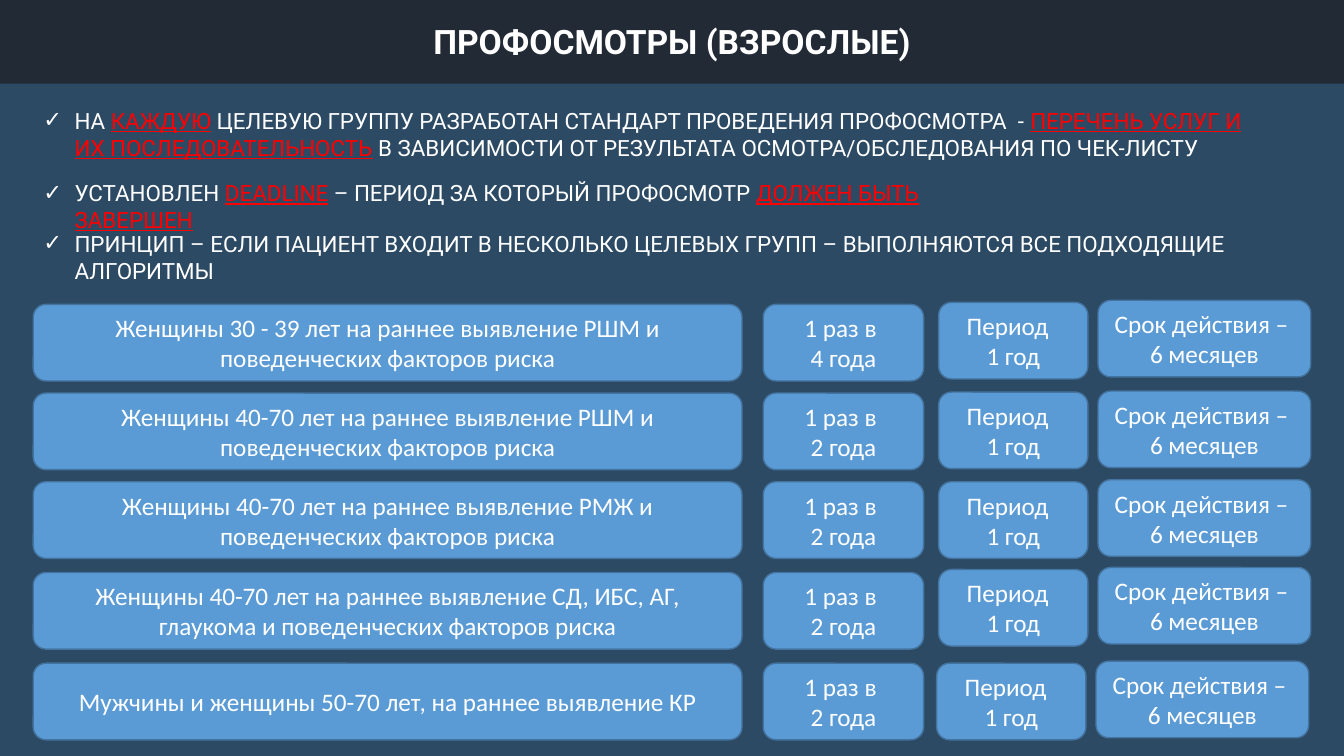
from dataclasses import dataclass

from lxml import etree
from pptx import Presentation
from pptx.dml.color import RGBColor
from pptx.enum.shapes import MSO_SHAPE
from pptx.enum.text import MSO_ANCHOR, MSO_AUTO_SIZE, PP_ALIGN
from pptx.oxml.ns import qn
from pptx.shapes.base import BaseShape
from pptx.slide import Slide
from pptx.text.text import Font
from pptx.util import Emu, Pt

RECT = MSO_SHAPE.RECTANGLE
ROUND = MSO_SHAPE.ROUNDED_RECTANGLE
MIDDLE = MSO_ANCHOR.MIDDLE
TOP = MSO_ANCHOR.TOP
FIXED = MSO_AUTO_SIZE.NONE
CENTER = PP_ALIGN.CENTER
LEFT = PP_ALIGN.LEFT

SCALE = 9144
WIDTH, HEIGHT = 1333, 750
WHITE, RED = "FFFFFF", "FF0000"
NAVY, DARK = "2C4A64", "222A35"
BLUE, EDGE = "5B9BD5", "43739E"
CARD = 76
INDENT = 31


@dataclass(frozen=True)
class Box:
    left: int
    top: int
    width: int
    height: int


@dataclass(frozen=True)
class Point:
    box: Box
    words: tuple[str, ...]


@dataclass(frozen=True)
class Group:
    label: str
    years: int
    top: int
    period: int
    term: int
    shift: int = 0


POINTS = (
    Point(Box(33, 101, 1218, 64), (
        "НА ", "КАЖДУЮ",
        " ЦЕЛЕВУЮ ГРУППУ РАЗРАБОТАН СТАНДАРТ ПРОВЕДЕНИЯ ПРОФОСМОТРА  - ",
        "ПЕРЕЧЕНЬ УСЛУГ И ИХ ПОСЛЕДОВАТЕЛЬНОСТЬ",
        " В ЗАВИСИМОСТИ ОТ РЕЗУЛЬТАТА ОСМОТРА/ОБСЛЕДОВАНИЯ ПО ЧЕК-ЛИСТУ")),
    Point(Box(33, 173, 1000, 37), (
        "УСТАНОВЛЕН ", "DEADLINE", " – ПЕРИОД ЗА КОТОРЫЙ ПРОФОСМОТР ",
        "ДОЛЖЕН БЫТЬ ЗАВЕРШЕН")),
    Point(Box(33, 223, 1314, 37), (
        "ПРИНЦИП – ЕСЛИ ПАЦИЕНТ ВХОДИТ В НЕСКОЛЬКО ЦЕЛЕВЫХ ГРУПП – "
        "ВЫПОЛНЯЮТСЯ ВСЕ ПОДХОДЯЩИЕ АЛГОРИТМЫ",)),
)

RISK = "поведенческих факторов риска"
GROUPS = (
    Group(f"Женщины 30 - 39 лет на раннее выявление РШМ и {RISK}", 4, 302, 300, 298),
    Group(f"Женщины 40-70 лет на раннее выявление РШМ и {RISK}", 2, 390, 389, 388),
    Group(f"Женщины 40-70 лет на раннее выявление РМЖ и {RISK}", 2, 478, 478, 476),
    Group(f"Женщины 40-70 лет на раннее выявление СД, ИБС, АГ, глаукома и {RISK}",
          2, 568, 565, 563),
    Group("Мужчины и женщины 50-70 лет, на раннее выявление КР", 2, 658, 658, 656, -2),
)


def px(value: int) -> Emu:
    return Emu(value * SCALE)


def color(code: str) -> RGBColor:
    return RGBColor.from_string(code)


def place(shape: BaseShape, box: Box) -> None:
    shape.left, shape.top = px(box.left), px(box.top)
    shape.width, shape.height = px(box.width), px(box.height)


def style(font: Font, face: str, size: int, tint: str = WHITE, bold: bool = False) -> None:
    font.name, font.size, font.bold = face, Pt(size), bold
    font.color.rgb = color(tint)


def paint(shape: BaseShape, tint: str) -> None:
    shape.fill.solid()
    shape.fill.fore_color.rgb = color(tint)


def write(shape: BaseShape, text: str, face: str, size: int, bold: bool = False) -> None:
    frame = shape.text_frame
    frame.text = text
    frame.word_wrap = True
    frame.auto_size = FIXED
    frame.vertical_anchor = MIDDLE
    for para in frame.paragraphs:
        para.alignment = CENTER
        for run in para.runs:
            style(run.font, face, size, bold=bold)


def panel(slide: Slide, kind: MSO_SHAPE, box: Box, tint: str) -> BaseShape:
    shape = slide.shapes.add_shape(
        kind, px(box.left), px(box.top), px(box.width), px(box.height))
    shape.shadow.inherit = False
    paint(shape, tint)
    shape.line.fill.background()
    return shape


def card(slide: Slide, box: Box, text: str) -> None:
    shape = panel(slide, ROUND, box, BLUE)
    shape.line.color.rgb = color(EDGE)
    shape.line.width = Pt(1)
    write(shape, text, "Calibri", 18)


def bullet(shape: BaseShape, point: Point) -> None:
    place(shape, point.box)
    frame = shape.text_frame
    frame.word_wrap = True
    frame.auto_size = FIXED
    frame.vertical_anchor = TOP
    para = frame.paragraphs[0]
    para.alignment = LEFT
    para.space_before = Pt(0)
    for spot, text in enumerate(point.words):
        run = para.add_run()
        run.text = text
        accent = spot % 2 == 1
        style(run.font, "Roboto", 16, RED if accent else WHITE)
        run.font.underline = accent
    props = para._p.get_or_add_pPr()
    props.set("marL", str(px(INDENT)))
    props.set("indent", str(px(-INDENT)))
    etree.SubElement(props, qn("a:buChar")).set("char", "✓")


def row(slide: Slide, group: Group) -> None:
    card(slide, Box(33, group.top, 703, CARD), group.label)
    card(slide, Box(757, group.top, 159, CARD), f"1 раз в \n{group.years} года")
    card(slide, Box(931 + group.shift, group.period, 148, CARD), "Период  \n1 год")
    card(slide, Box(1089 + group.shift, group.term, 211, CARD),
         "Срок действия – \n6 месяцев")


def main() -> None:
    deck = Presentation()
    deck.slide_width, deck.slide_height = px(WIDTH), px(HEIGHT)
    slide = deck.slides.add_slide(deck.slide_layouts.get_by_name("Comparison"))
    title, *bodies = slide.placeholders

    back = panel(slide, RECT, Box(0, 73, WIDTH, 677), NAVY)
    title.element.addprevious(back.element)
    place(title, Box(0, -1, WIDTH, 84))
    paint(title, DARK)
    write(title, "ПРОФОСМОТРЫ (ВЗРОСЛЫЕ)", "Roboto", 24, True)

    for body, point in zip(bodies, POINTS):
        bullet(body, point)
    for spare in bodies[len(POINTS):]:
        spare.element.getparent().remove(spare.element)

    for group in GROUPS:
        row(slide, group)
    deck.save("out.pptx")


if __name__ == "__main__":
    main()
